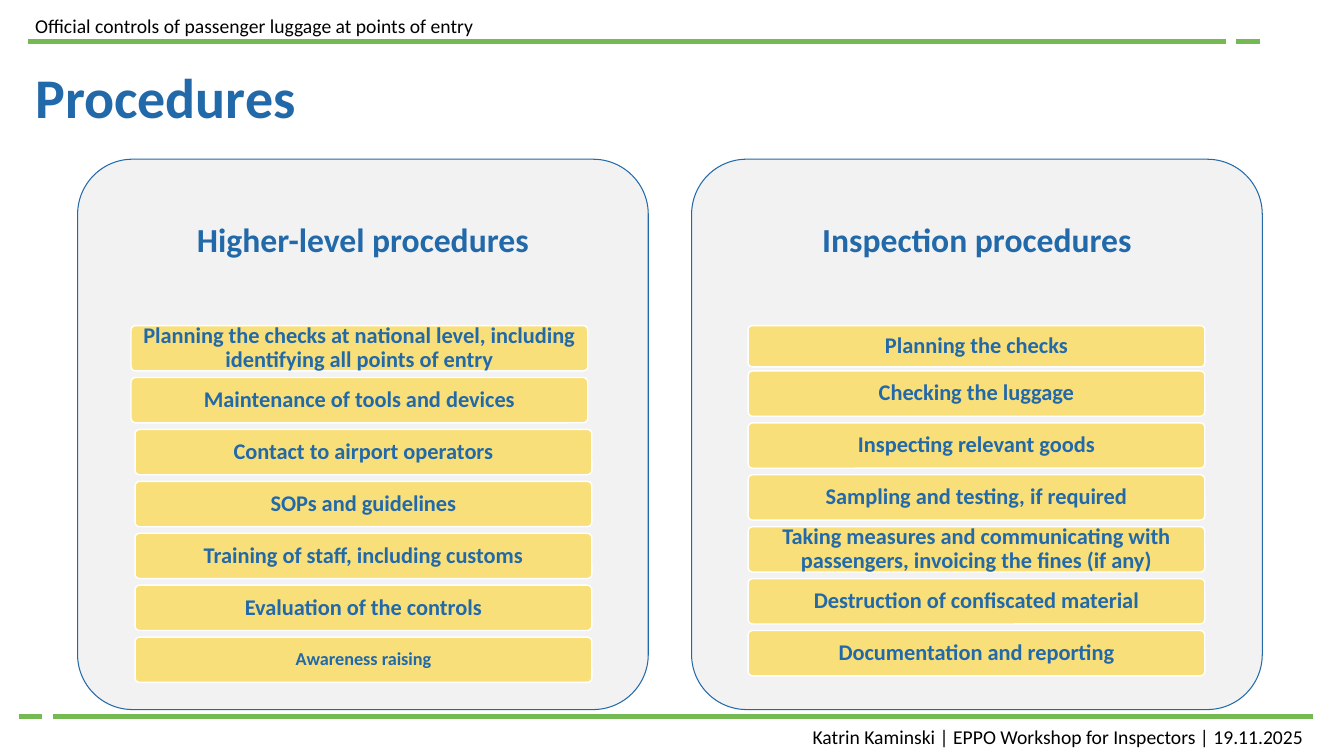
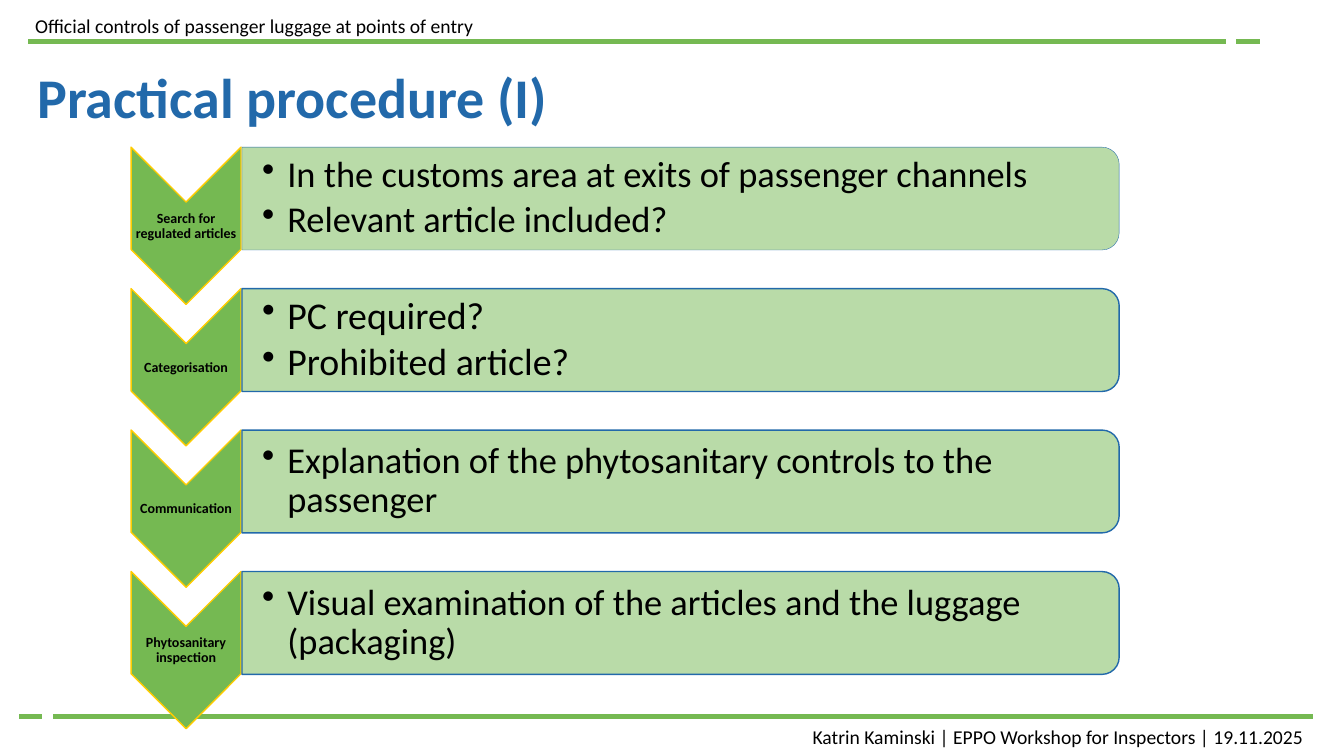
from lxml import etree
from pptx import Presentation
from pptx import util as u
from pptx.dml.color import RGBColor
from pptx.enum import shapes, text
from pptx.oxml.ns import qn

HEAD = "Official controls of passenger luggage at points of entry"
FOOT = "Katrin Kaminski | EPPO Workshop for Inspectors | 19.11.2025"
HIGH = [
    ("Planning the checks at national level, including identifying all points of entry", 16),
    ("Maintenance of tools and devices", 16),
    ("Contact to airport operators", 16),
    ("SOPs and guidelines", 16),
    ("Training of staff, including customs", 16),
    ("Evaluation of the controls", 16),
    ("Awareness raising", 13),
]
CHECKS = [
    "Planning the checks",
    "Checking the luggage",
    "Inspecting relevant goods",
    "Sampling and testing, if required",
    "Taking measures and communicating with passengers, invoicing the fines (if any)",
    "Destruction of confiscated material",
    "Documentation and reporting",
]
STEPS = [
    ("Search for regulated articles", 26, 0.25,
     ["In the customs area at exits of passenger channels", "Relevant article included?"]),
    ("Categorisation", 27, 1, ["PC required?", "Prohibited article?"]),
    ("Communication", 26, 1, ["Explanation of the phytosanitary controls to the passenger"]),
    ("Phytosanitary inspection", 26, 1,
     ["Visual examination of the articles and the luggage (packaging)"]),
]
RULES = [(0.28, 12.16, 0.41), (12.26, 12.5, 0.41), (0.53, 13.02, 7.11), (0.19, 0.42, 7.11)]
COLOR = {"green": "75B952", "blue": "2269AA", "gold": "FFCC00", "sand": "F9DF79",
         "grey": "F2F2F2", "white": "FFFFFF", "black": "000000"}
FONT = "Calibri"
STEP = 0.515
KIND = shapes.MSO_SHAPE
ALIGN = text.PP_ALIGN
ANCHOR = text.MSO_ANCHOR


def rgb(name):
    return RGBColor.from_string(COLOR[name])


def inch(*nums):
    return [u.Inches(n) for n in nums]


def write(shape, lines, size, color="black", bold=False, align=ALIGN.LEFT,
          anchor=ANCHOR.TOP, pad=(0.1, 0.05, 0.1, 0.05), lead=0.9, bullet=False):
    frame = shape.text_frame
    frame.word_wrap = True
    frame.auto_size = text.MSO_AUTO_SIZE.NONE
    frame.vertical_anchor = anchor
    (frame.margin_left, frame.margin_top,
     frame.margin_right, frame.margin_bottom) = inch(*pad)
    for i, line in enumerate(lines):
        para = frame.add_paragraph() if i else frame.paragraphs[0]
        para.text = line
        para.alignment = align
        para.line_spacing = lead
        if bullet:
            para.space_after = u.Pt(4)
            props = para._p.get_or_add_pPr()
            props.set("marL", str(u.Inches(0.25)))
            props.set("indent", str(u.Inches(-0.25)))
            etree.SubElement(props, qn("a:buChar")).set("char", "•")
        font = para.font
        font.name, font.size, font.bold = FONT, u.Pt(size), bold
        font.color.rgb = rgb(color)


def label(slide, box, lines, size, **style):
    write(slide.shapes.add_textbox(*inch(*box)), lines, size, **style)


def block(slide, kind, box, fill, line, width, turn=0, alpha=None):
    shape = slide.shapes.add_shape(kind, *inch(*box))
    shape.shadow.inherit = False
    shape.rotation = turn
    shape.fill.solid()
    shape.fill.fore_color.rgb = rgb(fill)
    shape.line.color.rgb = rgb(line)
    shape.line.width = u.Pt(width)
    if alpha:
        tint = shape._element.spPr.find(qn("a:solidFill"))[0]
        etree.SubElement(tint, qn("a:alpha")).set("val", str(alpha * 1000))
    return shape


def start(deck, title, left):
    slide = deck.slides.add_slide(deck.slide_layouts[5])
    for x1, x2, y in RULES:
        rule = slide.shapes.add_connector(shapes.MSO_CONNECTOR.STRAIGHT, *inch(x1, y, x2, y))
        rule.line.color.rgb = rgb("green")
        rule.line.width = u.Pt(3.25)
        etree.SubElement(rule._element.spPr, qn("a:effectLst"))
    label(slide, (0.25, 0.12, 11.91, 0.24), [HEAD], 14)
    label(slide, (0.57, 7.17, 12.46, 0.26), [FOOT], 14, align=ALIGN.RIGHT)
    head = slide.shapes.title
    head.left, head.top, head.width, head.height = inch(left, 0.57, 12.79, 1.45)
    write(head, [title], 40, color="blue", bold=True, lead=1)
    return slide


def panel(slide, left, title, bars):
    card = block(slide, KIND.ROUNDED_RECTANGLE, (left, 1.58, 5.66, 5.46), "grey", "blue", 0.75)
    card.adjustments[0] = 0.1
    style = dict(color="blue", bold=True, align=ALIGN.CENTER, anchor=ANCHOR.MIDDLE)
    write(card, [title], 24, pad=(0.1, 0.1, 0.1, 3.92), **style)
    for words, size, x, y, high in bars:
        bar = block(slide, KIND.ROUNDED_RECTANGLE, (x, y, 4.53, high), "sand", "white", 1)
        bar.adjustments[0] = 0.1
        write(bar, [words], size, pad=(0.04, 0.03, 0.04, 0.03), **style)


def lists(deck):
    slide = start(deck, "Procedures", 0.25)
    panel(slide, 0.77, "Higher-level procedures",
          [(words, size, 1.3 if i < 2 else 1.34, 3.23 + STEP * i, 0.45)
           for i, (words, size) in enumerate(HIGH)])
    first, *rest = CHECKS
    panel(slide, 6.86, "Inspection procedures",
          [(first, 16, 7.42, 3.23, 0.41)]
          + [(words, 16, 7.42, 3.68 + STEP * i, 0.45) for i, words in enumerate(rest)])


def turned(left, top, wide, high):
    return left + (wide - high) / 2, top + (high - wide) / 2, high, wide


def flow(deck):
    slide = start(deck, "Practical procedure (I)", 0.27)
    for i, (name, size, width, lines) in enumerate(STEPS):
        top = 1.46 + 4.21 / 3 * i
        block(slide, KIND.CHEVRON, turned(1.3, top, 1.09, 1.56), "green", "gold", 1, 90)
        label(slide, (1.3, top + 0.55, 1.09, 0.47), [name], 10, bold=True,
              align=ALIGN.CENTER, anchor=ANCHOR.MIDDLE, pad=(0.01,) * 4)
        block(slide, KIND.ROUND_2_SAME_RECTANGLE, turned(2.4, top, 8.7, 1.02),
              "green", "blue", width, 90, 50)
        label(slide, (2.4, top + 0.05, 8.65, 0.92), lines, size, bullet=True,
              anchor=ANCHOR.MIDDLE, pad=(0.2, 0.02, 0.02, 0.02))


def main():
    deck = Presentation()
    deck.slide_width, deck.slide_height = inch(13.33, 7.5)
    lists(deck)
    flow(deck)
    deck.save("out.pptx")


if __name__ == "__main__":
    main()
